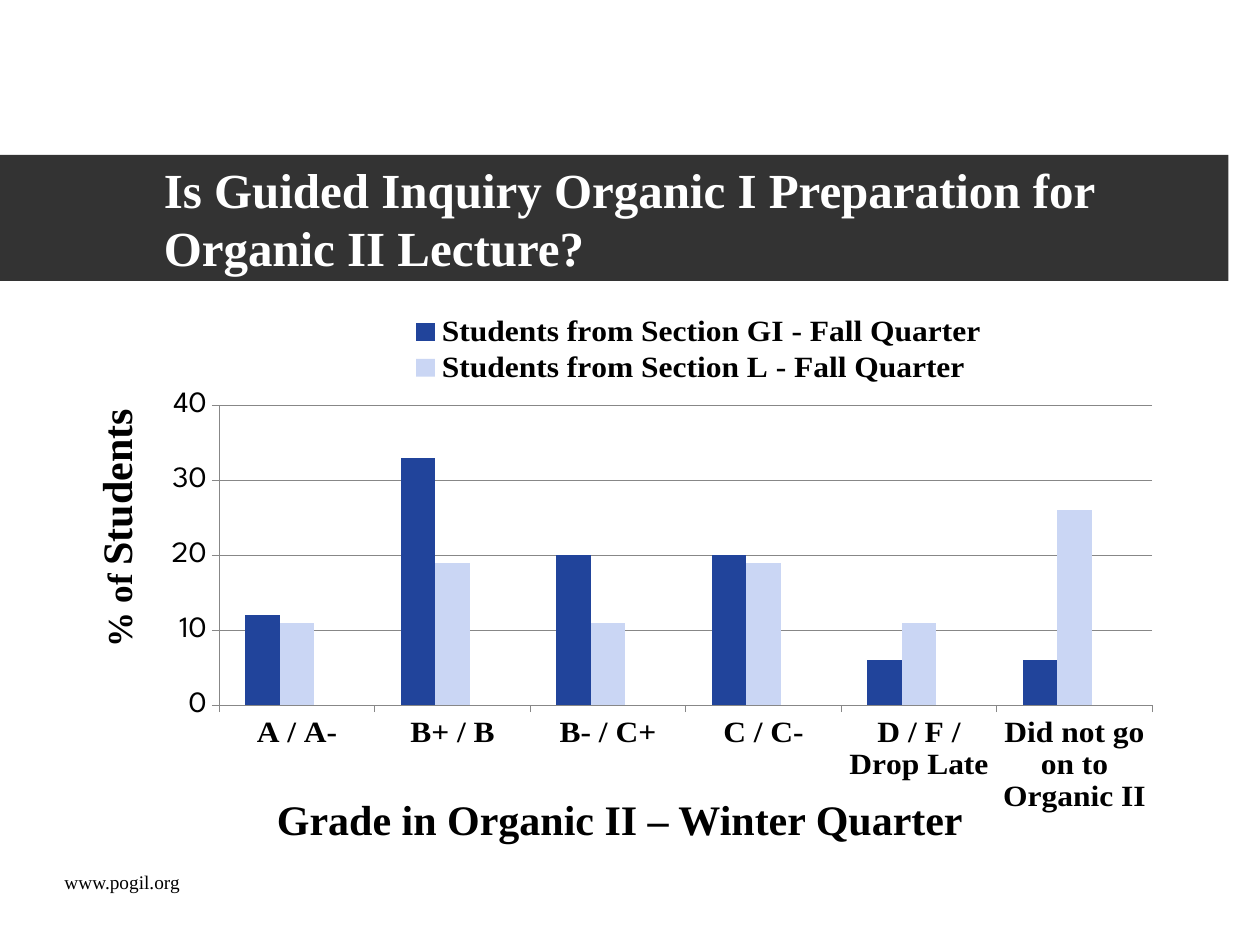
"""Build the slide comparing Organic II grades of two student sections."""
import pptx
import pptx.chart.data
import pptx.dml.color
import pptx.enum.chart
import pptx.enum.shapes
import pptx.enum.text
import pptx.oxml
import pptx.oxml.ns
import pptx.util

Inches, Pt = pptx.util.Inches, pptx.util.Pt
RGBColor = pptx.dml.color.RGBColor
ANCHOR, ALIGN = pptx.enum.text.MSO_ANCHOR, pptx.enum.text.PP_ALIGN

WHITE = RGBColor(0xFF, 0xFF, 0xFF)
BLACK = RGBColor(0, 0, 0)
CHARCOAL = RGBColor(0x33, 0x33, 0x33)
GRAY = RGBColor(0x87, 0x87, 0x87)
BLUE = RGBColor(0x21, 0x44, 0x9B)
PALE_BLUE = RGBColor(0xCA, 0xD6, 0xF4)
GOLD = RGBColor(0xE4, 0xC4, 0x02)
SERIF, SANS = "Times New Roman", "League Spartan"

TITLE = ["Is Guided Inquiry Organic I Preparation for", "Organic II Lecture?"]
GRADES = ["A / A-", "B+ / B", "B- / C+", "C / C-", "D / F / Drop Late",
          "Did not go on to Organic II"]
SECTIONS = [
    ("Students from Section GI - Fall Quarter", [12, 33, 20, 20, 6, 6], BLUE),
    ("Students from Section L - Fall Quarter", [11, 19, 11, 19, 11, 26], PALE_BLUE),
    ("Series 3", [None] * len(GRADES), GOLD),
]
HIDDEN_ENTRY = 2
PLOT_LAYOUT = (0.075, 0.208, 0.925, 0.636)
LEGEND_LAYOUT = (0.26, 0.01, 0.58, 0.16)


def add_text(page, place, lines, bold=True, color=BLACK, fill=None, align=ALIGN.LEFT,
             anchor=ANCHOR.TOP, left_inset=0.1, right_inset=0.1, rotation=0, indent=0):
    """Add a box whose lines are lists of (text, size) spans."""
    box = page.shapes.add_shape(pptx.enum.shapes.MSO_SHAPE.RECTANGLE, *map(Inches, place)) \
        if fill else page.shapes.add_textbox(*map(Inches, place))
    if fill:
        box.shadow.inherit = False
        box.fill.solid()
        box.fill.fore_color.rgb = fill
        box.line.fill.background()
    box.rotation = rotation
    frame = box.text_frame
    frame.word_wrap = True
    frame.vertical_anchor = anchor
    frame.margin_left, frame.margin_right = Inches(left_inset), Inches(right_inset)
    para = frame.paragraphs[0]
    para.alignment = align
    if indent:
        para._p.get_or_add_pPr().set("marL", str(Inches(indent)))
    for index, line in enumerate(lines):
        if index:
            para.add_line_break()
        for text, size in line:
            span = para.add_run()
            span.text = text
            set_font(span.font, SERIF, size, bold, color)


def set_font(font, name, size, bold=False, color=BLACK):
    font.name, font.size, font.bold = name, Pt(size), bold
    font.color.rgb = color


def make_layout(place, inner=False):
    target = '<c:layoutTarget val="inner"/>' if inner else ""
    modes = "".join(f'<c:{side}Mode val="edge"/>' for side in "xy")
    sizes = "".join(f'<c:{side} val="{value}"/>' for side, value in zip("xywh", place))
    return pptx.oxml.parse_xml(
        f'<c:layout {pptx.oxml.ns.nsdecls("c")}><c:manualLayout>'
        f'{target}{modes}{sizes}</c:manualLayout></c:layout>')


def add_grade_chart(page):
    kinds = pptx.enum.chart
    data = pptx.chart.data.CategoryChartData()
    data.categories = GRADES
    for name, values, _ in SECTIONS:
        data.add_series(name, values)
    chart = page.shapes.add_chart(kinds.XL_CHART_TYPE.COLUMN_CLUSTERED,
                                  *map(Inches, (1.14, 2.44, 8.01, 4.01)), data).chart
    chart.has_title = False
    set_font(chart.font, SANS, 18)
    plot = chart.plots[0]
    plot.vary_by_categories = False
    plot.gap_width, plot.overlap = 150, 0
    for series, (_, _, color) in zip(plot.series, SECTIONS):
        series.format.fill.solid()
        series.format.fill.fore_color.rgb = color

    values = chart.value_axis
    values.minimum_scale, values.maximum_scale, values.major_unit = 0, 40, 10
    values.has_major_gridlines = True
    set_font(values.tick_labels.font, SANS, 18)
    set_font(chart.category_axis.tick_labels.font, SERIF, 18, True)
    for axis in (values, chart.category_axis):
        axis.major_tick_mark = kinds.XL_TICK_MARK.OUTSIDE
    for line in (values.format.line, chart.category_axis.format.line,
                 values.major_gridlines.format.line):
        line.color.rgb = GRAY
        line.width = Pt(0.75)

    chart.has_legend = True
    legend = chart.legend
    legend.position = kinds.XL_LEGEND_POSITION.RIGHT
    legend.include_in_layout = False
    set_font(legend.font, SERIF, 18, True)
    entry = pptx.oxml.parse_xml(
        f'<c:legendEntry {pptx.oxml.ns.nsdecls("c")}><c:idx val="{HIDDEN_ENTRY}"/>'
        '<c:delete val="1"/></c:legendEntry>')
    replace_layout(legend._element, make_layout(LEGEND_LAYOUT), 1)
    legend._element.insert(1, entry)
    replace_layout(chart._chartSpace.chart.plotArea, make_layout(PLOT_LAYOUT, True), 0)


def replace_layout(parent, layout, position):
    for old in parent.findall(pptx.oxml.ns.qn("c:layout")):
        parent.remove(old)
    parent.insert(position, layout)


def main():
    deck = pptx.Presentation()
    deck.slide_width, deck.slide_height = Inches(10), Inches(7.5)
    page = deck.slides.add_slide(deck.slide_layouts[6])
    add_text(page, (0, 1.23, 9.75, 1), [[(line, 28)] for line in TITLE], color=WHITE,
             fill=CHARCOAL, anchor=ANCHOR.MIDDLE, left_inset=1.3, right_inset=0.3)
    add_grade_chart(page)
    add_text(page, (-0.13, 3.94, 2.09, 0.5), [[("% of ", 20), ("Students", 24)]],
             rotation=270)
    add_text(page, (2.1, 6.25, 6.23, 0.5), [[("Grade in Organic II – Winter Quarter", 24)]])
    add_text(page, (0.28, 6.86, 1.26, 0.29), [[("www.pogil.org", 11)]], bold=False,
             align=ALIGN.CENTER, indent=0.12)
    deck.save("out.pptx")


if __name__ == "__main__":
    main()
